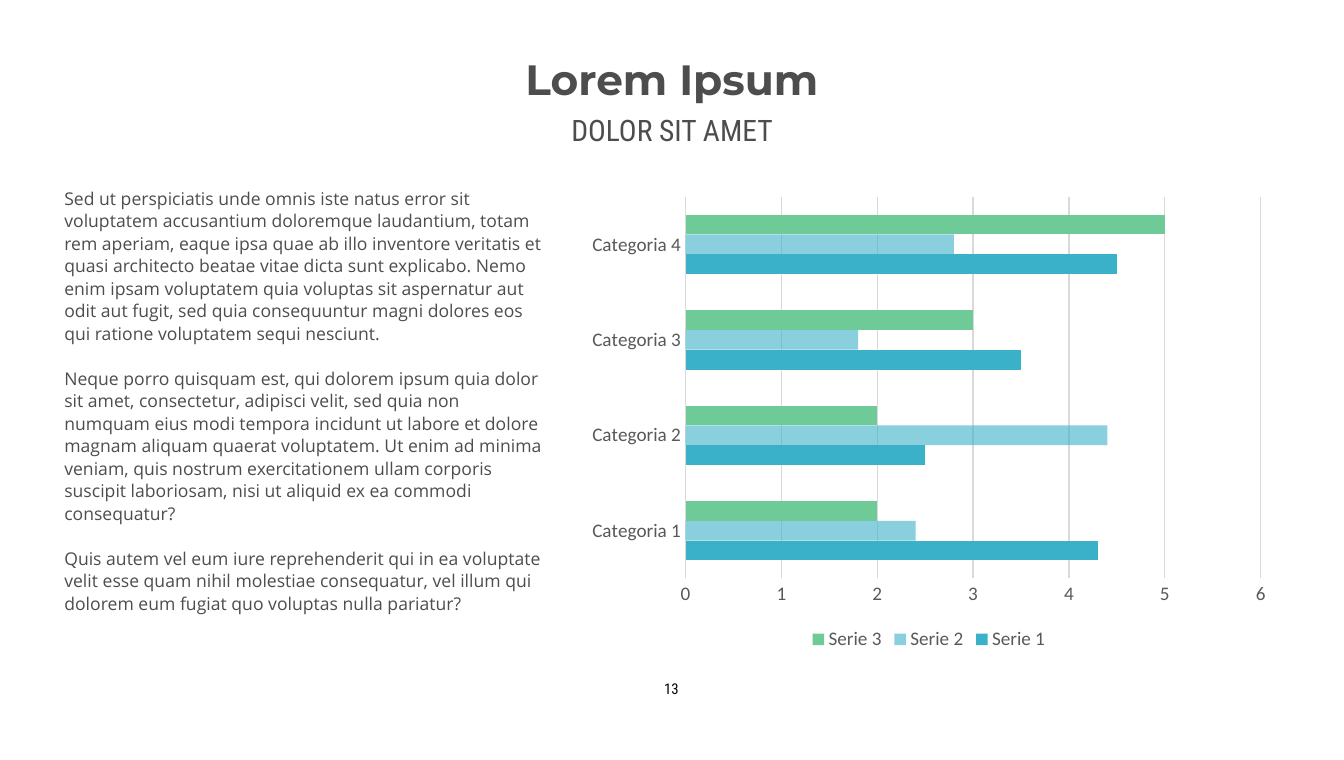
from lxml import etree
from pptx import Presentation
from pptx import util as u
from pptx.chart.data import CategoryChartData
from pptx.dml.color import RGBColor
from pptx.enum import chart as charts, shapes, text
from pptx.oxml.ns import qn

COLOURS = {
    "text": "4D4D4D",
    "number": "000000",
    "labels": "595959",
    "grid": "D9D9D9",
    "blue": "3BB0C9",
    "green": "6ECB98",
}
LINE_HEIGHT = u.Pt(14.1)
PARAGRAPHS = [
    "Sed ut perspiciatis unde omnis iste natus error sit voluptatem accusantium "
    "doloremque laudantium, totam rem aperiam, eaque ipsa quae ab illo inventore "
    "veritatis et quasi architecto beatae vitae dicta sunt explicabo. Nemo enim ipsam "
    "voluptatem quia voluptas sit aspernatur aut odit aut fugit, sed quia consequuntur "
    "magni dolores eos qui ratione voluptatem sequi nesciunt.",
    "Neque porro quisquam est, qui dolorem ipsum quia dolor sit amet, consectetur, "
    "adipisci velit, sed quia non numquam eius modi tempora incidunt ut labore et dolore "
    "magnam aliquam quaerat voluptatem. Ut enim ad minima veniam, quis nostrum "
    "exercitationem ullam corporis suscipit laboriosam, nisi ut aliquid ex ea commodi "
    "consequatur?",
    "Quis autem vel eum iure reprehenderit qui in ea voluptate velit esse quam nihil "
    "molestiae consequatur, vel illum qui dolorem eum fugiat quo voluptas nulla pariatur?",
]
CATEGORIES = [f"Categoria {number}" for number in range(1, 5)]
# name, values, colour, opacity in percent
SERIES = [
    ("Serie 1", (4.3, 2.5, 3.5, 4.5), "blue", 100),
    ("Serie 2", (2.4, 4.4, 1.8, 2.8), "blue", 60),
    ("Serie 3", (2, 2, 3, 5), "green", 100),
]


def colour(name):
    return RGBColor.from_string(COLOURS[name])


def inches(*lengths):
    return [u.Inches(length) for length in lengths]


def style_font(font, name, size, shade, bold=False):
    font.name, font.size, font.bold = name, u.Pt(size), bold
    font.color.rgb = colour(shade)


def write(shape, lines, font, align=text.PP_ALIGN.LEFT, anchor=text.MSO_ANCHOR.TOP,
          spacing=1.0, gap=0, wrap=True):
    """Fill a shape with paragraphs; font is (name, size, colour[, bold])."""
    frame = shape.text_frame
    frame.word_wrap = wrap
    frame.auto_size = text.MSO_AUTO_SIZE.NONE
    frame.vertical_anchor = anchor
    frame.margin_left = frame.margin_right = frame.margin_top = frame.margin_bottom = 0
    for index, line in enumerate(lines):
        para = frame.add_paragraph() if index else frame.paragraphs[0]
        para.alignment = align
        para.line_spacing = spacing
        para.space_before = gap if index else u.Pt(0)
        span = para.add_run()
        span.text = line
        style_font(span.font, *font)


def add_heading(page, left, top, width, height):
    half = height / 2
    title = page.shapes.title
    title.left, title.top, title.width, title.height = inches(left, top, width, half)
    write(title, ["Lorem Ipsum"], ("Montserrat", 26.5, "text", True), text.PP_ALIGN.CENTER)
    subtitle = page.shapes.add_textbox(*inches(left, top + half, width, half))
    write(subtitle, ["DOLOR SIT AMET"], ("Roboto Condensed", 18.5, "text"),
          text.PP_ALIGN.CENTER)


def add_body(page, left, top, width, height):
    body = page.shapes.add_textbox(*inches(left, top, width, height))
    write(body, PARAGRAPHS, ("Open Sans", 11, "text"), anchor=text.MSO_ANCHOR.BOTTOM,
          spacing=LINE_HEIGHT, gap=LINE_HEIGHT)


def add_bar_chart(page, left, top, width, height):
    data = CategoryChartData()
    data.categories = CATEGORIES
    for name, values, _, _ in SERIES:
        data.add_series(name, values)
    chart = page.shapes.add_chart(charts.XL_CHART_TYPE.BAR_CLUSTERED,
                                  *inches(left, top, width, height), data).chart
    chart.has_title = False
    style_font(chart.font, "Calibri", 12, "labels")
    chart.has_legend = True
    chart.legend.position = charts.XL_LEGEND_POSITION.BOTTOM
    chart.legend.include_in_layout = False
    style_font(chart.legend.font, "Calibri", 12, "labels")

    plot = chart.plots[0]
    plot.gap_width, plot.overlap, plot.vary_by_categories = 182, 0, False
    for series, (_, _, shade, opacity) in zip(plot.series, SERIES):
        fill = series.format.fill
        fill.solid()
        fill.fore_color.rgb = colour(shade)
        series.invert_if_negative = False
        if opacity < 100:
            tint = next(series.format.fill._xPr.iter(qn("a:srgbClr")))
            etree.SubElement(tint, qn("a:alpha"), val=str(opacity * 1000))

    category_axis, value_axis = chart.category_axis, chart.value_axis
    for axis in (category_axis, value_axis):
        axis.major_tick_mark = axis.minor_tick_mark = charts.XL_TICK_MARK.NONE
        style_font(axis.tick_labels.font, "Calibri", 12, "labels")
    category_axis.has_major_gridlines = False
    value_axis.has_major_gridlines = True
    value_axis.minimum_scale, value_axis.maximum_scale, value_axis.major_unit = 0, 6, 1
    value_axis.format.line.fill.background()
    for line in (category_axis.format.line, value_axis.major_gridlines.format.line):
        line.color.rgb = colour("grid")
        line.width = u.Pt(0.75)


def add_page_number(page, left, top, size):
    badge = page.shapes.add_shape(shapes.MSO_SHAPE.OVAL, *inches(left, top, size, size))
    badge.shadow.inherit = False
    badge.fill.background()
    badge.line.fill.background()
    write(badge, ["13"], ("Roboto Condensed", 9.3, "number"), text.PP_ALIGN.CENTER,
          text.MSO_ANCHOR.MIDDLE, LINE_HEIGHT, wrap=False)


def main():
    deck = Presentation()
    deck.slide_width, deck.slide_height = inches(11.69, 6.61)
    page = deck.slides.add_slide(deck.slide_layouts[5])
    add_page_number(page, 5.68, 5.81, 0.32)
    add_heading(page, 0.56, 0.46, 10.57, 1.02)
    add_bar_chart(page, 5.03, 1.63, 6.1, 4.07)
    add_body(page, 0.56, 1.27, 4.17, 4.07)
    deck.save("out.pptx")


if __name__ == "__main__":
    main()
